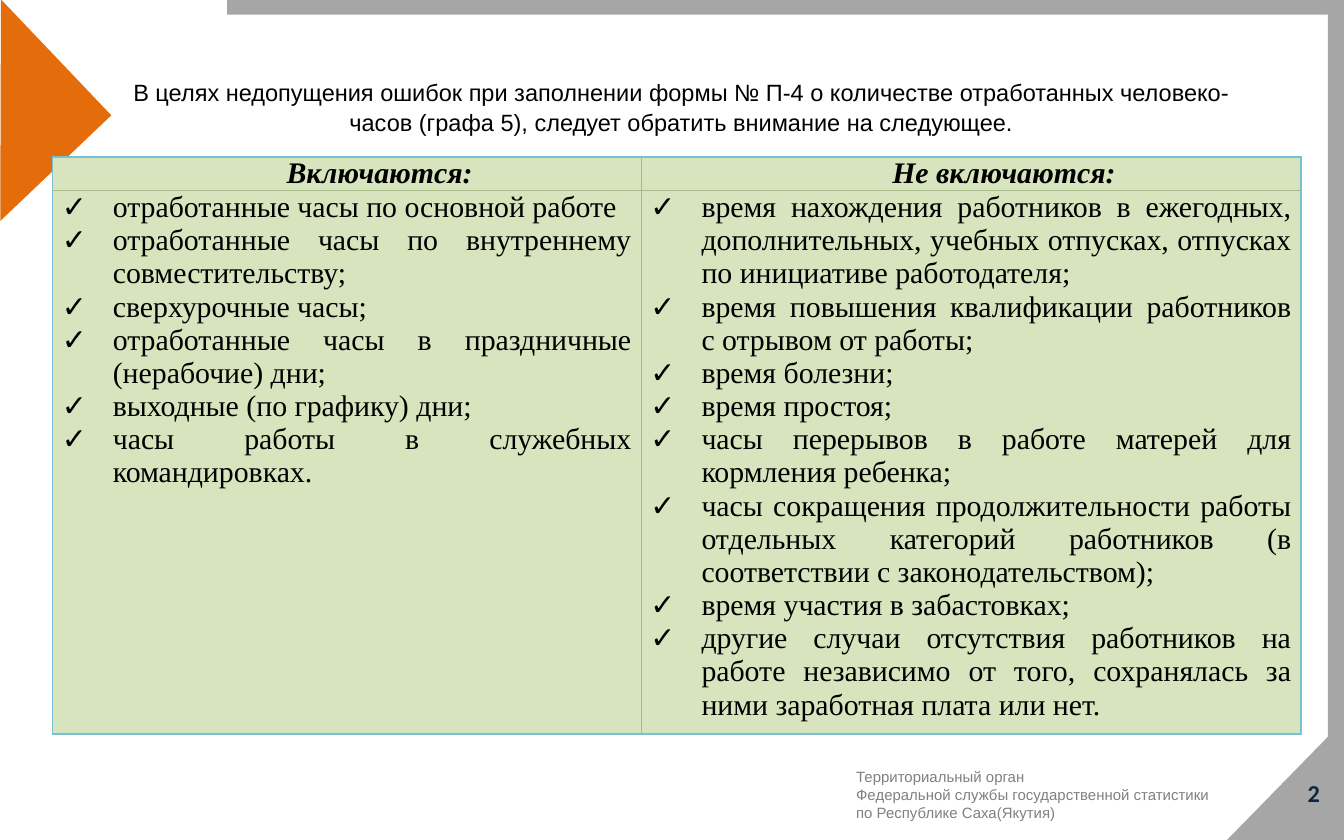
from lxml.etree import SubElement as Sub
from pptx import Presentation
from pptx.dml.color import RGBColor as Rgb
from pptx.enum.shapes import MSO_SHAPE as Kind
from pptx.enum.text import MSO_ANCHOR as Anchor, MSO_AUTO_SIZE as Fit, PP_ALIGN as Align
from pptx.oxml.ns import qn
from pptx.util import Inches, Pt

HUE = {"gray": "A6A6A6", "flame": "E46C0A", "ink": "000000", "note": "808080",
       "navy": "0F243E", "leaf": "D7E4BD", "edge": "78C0D4", "rule": "A9BA8A"}
STEP = Inches(0.1)  # the slide is a grid of 100 columns by 62.5 rows
SERIF = "Times New Roman"

TITLE = ("В целях недопущения ошибок при заполнении формы № П-4 о количестве "
         "отработанных человеко-часов (графа 5), следует обратить внимание на следующее.")
OFFICE = ["Территориальный орган",
          "Федеральной службы государственной статистики",
          "по Республике Саха(Якутия)"]
HEADS = ["Включаются:", "Не включаются:"]
LISTS = [
    ["отработанные часы по основной работе",
     "отработанные часы по внутреннему совместительству;",
     "сверхурочные часы;",
     "отработанные часы в праздничные (нерабочие) дни;",
     "выходные (по графику) дни;",
     "часы работы в служебных командировках."],
    ["время нахождения работников в ежегодных, дополнительных, учебных отпусках, "
     "отпусках по инициативе работодателя;",
     "время повышения квалификации работников с отрывом от работы;",
     "время болезни;",
     "время простоя;",
     "часы перерывов в работе матерей для кормления ребенка;",
     "часы сокращения продолжительности работы отдельных категорий работников "
     "(в соответствии с законодательством);",
     "время участия в забастовках;",
     "другие случаи отсутствия работников на работе независимо от того, "
     "сохранялась за ними заработная плата или нет."],
]


def grid(*cells):
    return [round(n * STEP) for n in cells]


def color(name):
    return Rgb.from_string(HUE[name])


def add_block(slide, kind, area, hue, turn=0):
    block = slide.shapes.add_shape(kind, *grid(*area))
    block.shadow.inherit = False
    block.fill.solid()
    block.fill.fore_color.rgb = color(hue)
    block.line.fill.background()
    block.rotation = turn


def write(frame, lines, size, font, hue, align, bold=False, slant=False):
    """Fill a frame with one paragraph per line and return the paragraphs."""
    paras = [frame.paragraphs[0]] + [frame.add_paragraph() for _ in lines[1:]]
    for para, line in zip(paras, lines):
        para.alignment = align
        run = para.add_run()
        run.text = line
        face = run.font
        face.size, face.name = Pt(size), font
        face.bold, face.italic = bold, slant
        face.color.rgb = color(hue)
    return paras


def set_frame(frame):
    frame.word_wrap = True
    frame.auto_size = Fit.NONE
    frame.vertical_anchor = Anchor.MIDDLE
    frame.margin_left = frame.margin_right = Inches(0.08)
    frame.margin_top = frame.margin_bottom = Inches(0.04)
    return frame


def add_text(slide, area, *style, **extra):
    box = slide.shapes.add_textbox(*grid(*area))
    write(set_frame(box.text_frame), *style, **extra)


def set_title(slide, area):
    title = slide.shapes.title
    title.left, title.top, title.width, title.height = grid(*area)
    para, = write(set_frame(title.text_frame), [TITLE], 12.6, "Arial", "ink", Align.CENTER)
    para.line_spacing = 1.07


def indent(para, left, first):
    props = para._p.get_or_add_pPr()
    props.set("marL", str(Inches(left)))
    props.set("indent", str(Inches(first)))
    return props


def add_tick(para):
    props = indent(para, 0.38, -0.38)
    Sub(props, qn("a:buFont"), typeface="Arial")
    Sub(props, qn("a:buChar"), char="✓")


def set_cell(cell, row, col):
    cell.margin_left = cell.margin_right = Inches(0.07)
    cell.margin_top = cell.margin_bottom = 0
    # Outer sides take the edge colour, inner sides the thin rule
    outer = {"L": col == 0, "R": col == 1, "T": row == 0, "B": row == 1}
    props = cell._tc.get_or_add_tcPr()
    for side, out in outer.items():
        line = Sub(props, qn(f"a:ln{side}"), w=str(Pt(1 if out else 0.5)))
        fill = Sub(line, qn("a:solidFill"))
        Sub(fill, qn("a:srgbClr"), val=HUE["edge" if out else "rule"])
    cell.fill.solid()
    cell.fill.fore_color.rgb = color("leaf")


def add_lists(slide, area, cols, rows):
    table = slide.shapes.add_table(2, 2, *grid(*area)).table
    table.first_row = table.horz_banding = False
    for row, tall in zip(table.rows, grid(*rows)):
        row.height = tall
    for col, wide in enumerate(grid(*cols)):
        table.columns[col].width = wide
        head, body = table.cell(0, col), table.cell(1, col)
        set_cell(head, 0, col)
        set_cell(body, 1, col)
        para, = write(head.text_frame, [HEADS[col]], 16, SERIF, "ink", Align.CENTER,
                      bold=True, slant=True)
        indent(para, 0, 0.49)
        for para in write(body.text_frame, LISTS[col], 16, SERIF, "ink", Align.JUSTIFY):
            add_tick(para)


def main():
    deck = Presentation()
    deck.slide_width, deck.slide_height = grid(100, 62.5)
    slide = deck.slides.add_slide(deck.slide_layouts[5])

    # Frame of the page
    add_block(slide, Kind.RIGHT_TRIANGLE, (91.2, 53.7, 8.9, 8.7), "gray", 270)
    add_block(slide, Kind.RECTANGLE, (98.8, 0, 1.2, 55.5), "gray")
    add_block(slide, Kind.RECTANGLE, (16.9, 0, 81.9, 1.1), "gray")
    add_block(slide, Kind.RIGHT_TRIANGLE, (-5.9, 2.5, 11.9, 11.4), "flame", 226.4)

    # Title, footer and page number
    set_title(slide, (8, 5.6, 85.3, 4.6))
    add_text(slide, (62.9, 57, 37.1, 4.2), OFFICE, 8, "Arial", "note", Align.LEFT)
    add_text(slide, (94.9, 56.8, 4.1, 4.4), ["2"], 13, "Calibri", "navy", Align.RIGHT,
             bold=True)

    # What counts and what does not
    add_lists(slide, (3.9, 11.7, 92.9, 42.9), (43.8, 49.1), (2.5, 40.4))
    deck.save("out.pptx")


if __name__ == "__main__":
    main()
